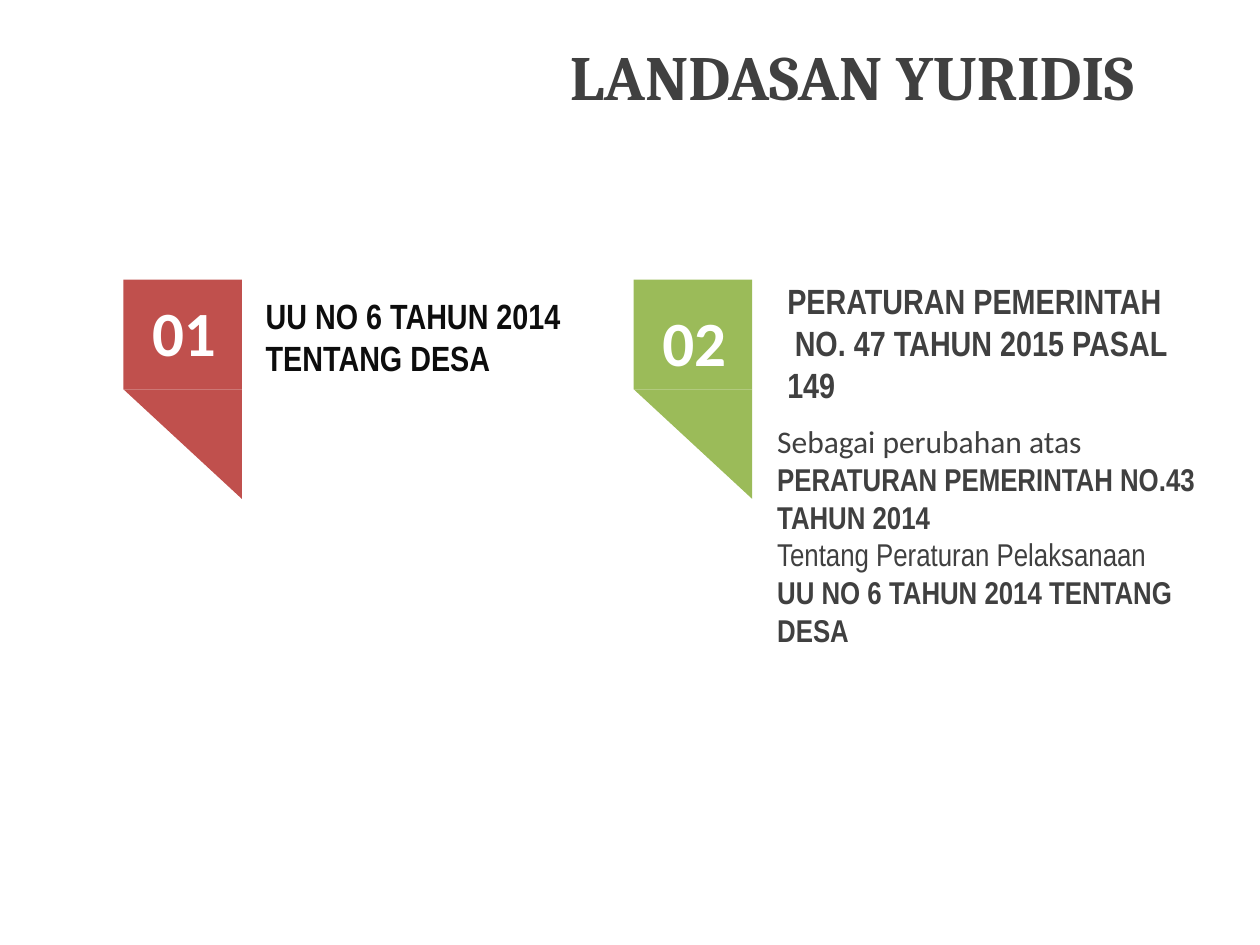
from pptx import Presentation
from pptx.dml.color import RGBColor
from pptx.enum import shapes, text
from pptx.util import Inches, Pt

COLORS = {
    "red": "C0504D",
    "green": "9BBB59",
    "dark": "404040",
    "black": "0D0D0D",
    "white": "FFFFFF",
}
FLAG_WIDTH, FLAG_HEIGHT = 0.94, 0.87
NARROW = {"name": "Arial Narrow", "bold": True}


def color(name):
    return RGBColor.from_string(COLORS[name])


def style(paragraph, hue, size, **formats):
    font = paragraph.font
    font.size = Pt(size)
    font.color.rgb = color(hue)
    for attribute, value in formats.items():
        setattr(font, attribute, value)


def add_title(slide, left, top, width, height):
    title = slide.shapes.title
    box = {"left": left, "top": top, "width": width, "height": height}
    for attribute, value in box.items():
        setattr(title, attribute, Inches(value))
    frame = title.text_frame
    frame.text = "LANDASAN YURIDIS"
    frame.vertical_anchor = text.MSO_ANCHOR.MIDDLE
    frame.margin_right = Inches(1)
    heading = frame.paragraphs[0]
    heading.alignment = text.PP_ALIGN.RIGHT
    style(heading, "dark", 36, name="Cambria", bold=True)


def add_lines(parent, left, top, width, height, lines):
    """Add a wrapped text box and return its paragraphs; lines hold (words, formats)."""
    box = parent.shapes.add_textbox(*map(Inches, (left, top, width, height)))
    frame = box.text_frame
    frame.word_wrap = True
    frame.auto_size = text.MSO_AUTO_SIZE.SHAPE_TO_FIT_TEXT
    for index, (words, formats) in enumerate(lines):
        paragraph = frame.paragraphs[0] if index == 0 else frame.add_paragraph()
        paragraph.text = words
        style(paragraph, **formats)
    return frame.paragraphs


def add_flag(slide, left, top, hue, number, number_drop):
    """Draw a square over a pointed tail, with its number."""
    flag = slide.shapes.add_group_shape()
    parts = (shapes.MSO_SHAPE.RECTANGLE, shapes.MSO_SHAPE.ISOSCELES_TRIANGLE)
    for row, kind in enumerate(parts):
        part = flag.shapes.add_shape(
            kind, Inches(left), Inches(top + row * FLAG_HEIGHT),
            Inches(FLAG_WIDTH), Inches(FLAG_HEIGHT))
        part.shadow.inherit = False
        part.fill.solid()
        part.fill.fore_color.rgb = color(hue)
        part.line.fill.background()
    # The last part is the tail: its point goes to the lower right.
    part.adjustments[0] = 0
    part.rotation = 180

    label = {"hue": "white", "size": 36, "name": "Calibri", "bold": True}
    digits = add_lines(slide, left + 0.09, top + number_drop, 0.78, 0.71,
                       [(number, label)])
    digits[0].alignment = text.PP_ALIGN.CENTER


def add_village_law(slide, left, top):
    add_flag(slide, left, top, "red", "01", 0.06)
    add_lines(slide, left + 1.03, top + 0.07, 2.91, 0.77, [
        ("UU NO 6 TAHUN 2014 TENTANG DESA", {"hue": "black", "size": 20, **NARROW}),
    ])


def add_government_regulation(slide, left, top):
    add_flag(slide, left, top, "green", "02", 0.14)
    regulation = slide.shapes.add_group_shape()
    heading = {"hue": "dark", "size": 20, **NARROW}
    detail = {"hue": "dark", "size": 18}
    strong = {**detail, **NARROW}
    add_lines(regulation, left + 1.04, top + 1.08, 3.93, 1.62, [
        ("Sebagai perubahan atas", {**detail, "name": "Calibri"}),
        ("PERATURAN PEMERINTAH NO.43 TAHUN 2014", strong),
        ("Tentang Peraturan Pelaksanaan", {**strong, "bold": False}),
        ("UU NO 6 TAHUN 2014 TENTANG DESA", strong),
    ])
    headings = add_lines(regulation, left + 1.12, top - 0.05, 3.23, 0.77, [
        ("PERATURAN PEMERINTAH", heading),
        ("NO. 47 TAHUN 2015 PASAL 149", heading),
    ])
    headings[1]._p.get_or_add_pPr().set("indent", str(Inches(0.06)))


def main():
    deck = Presentation()
    deck.slide_width, deck.slide_height = Inches(10), Inches(7.5)
    slide = deck.slides.add_slide(deck.slide_layouts[5])
    add_title(slide, 0, 0.18, 10, 0.84)
    add_village_law(slide, 0.98, 2.22)
    add_government_regulation(slide, 5.03, 2.22)
    deck.save("out.pptx")


if __name__ == "__main__":
    main()
